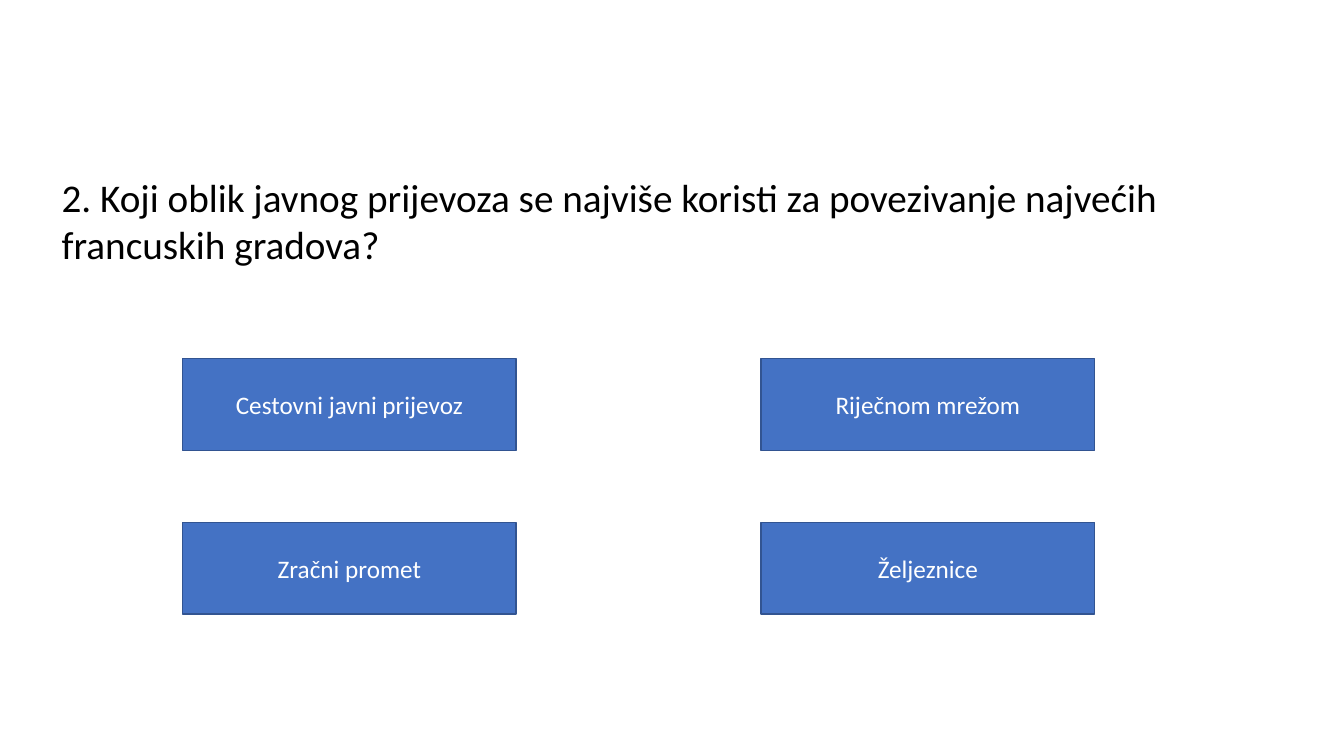
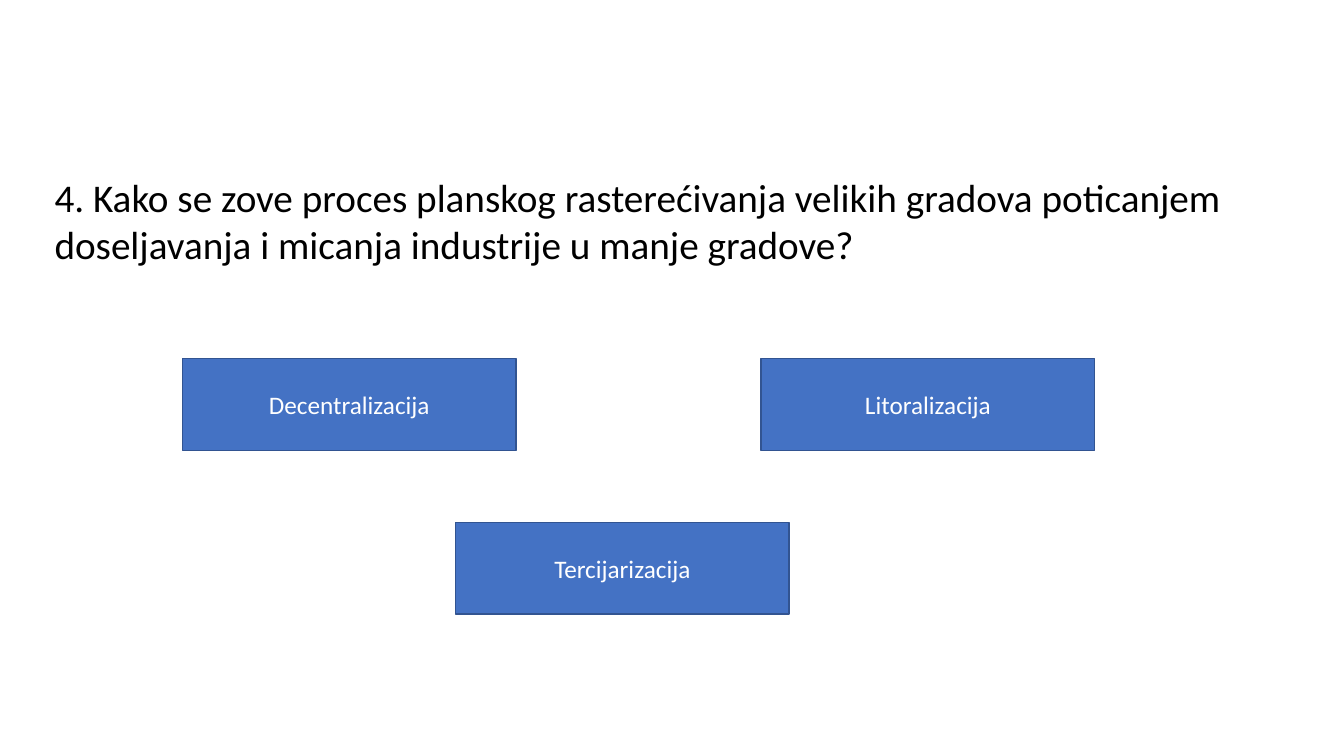
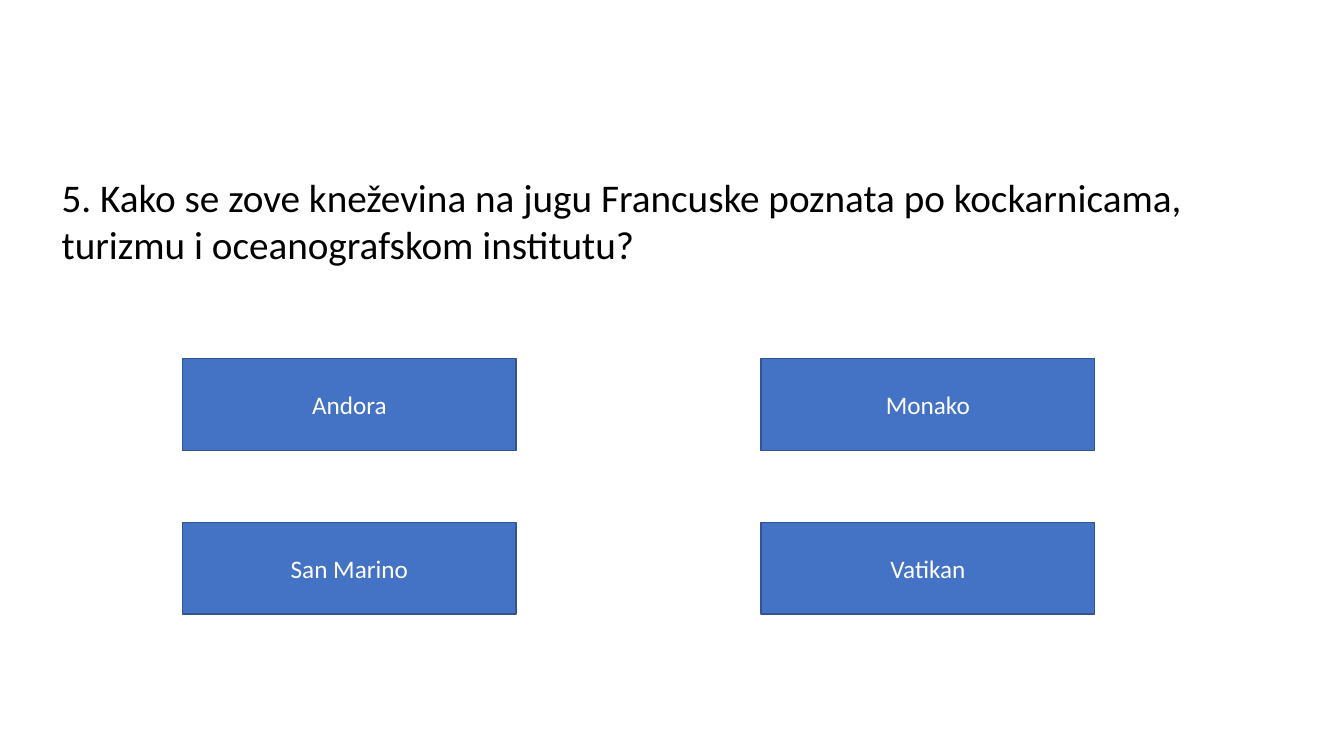
"""Build three quiz slides about France."""
from pptx import Presentation
from pptx.dml.color import RGBColor
from pptx.enum.shapes import MSO_SHAPE
from pptx.enum.text import MSO_ANCHOR, MSO_AUTO_SIZE, PP_ALIGN
from pptx.util import Cm, Pt

RECT = MSO_SHAPE.RECTANGLE
TOP, MIDDLE = MSO_ANCHOR.TOP, MSO_ANCHOR.MIDDLE
LEFT, CENTER = PP_ALIGN.LEFT, PP_ALIGN.CENTER
NO_FIT = MSO_AUTO_SIZE.NONE

COLORS = {"ink": "000000", "box": "4472C4", "edge": "325491", "light": "FFFFFF"}
COLS = (4.6, 19.18)
ROWS = (9.04, 13.16)
MID = 11.48
SLIDES = (
    (1.3, "2. Koji oblik javnog prijevoza se najviše koristi za povezivanje "
          "najvećih francuskih gradova?",
     ("Cestovni javni prijevoz", "Riječnom mrežom", "Zračni promet", "Željeznice")),
    (1.12, "4. Kako se zove proces planskog rasterećivanja velikih gradova "
           "poticanjem doseljavanja i micanja industrije u manje gradove?",
     ("Decentralizacija", "Litoralizacija", "Tercijarizacija")),
    (1.3, "5. Kako se zove kneževina na jugu Francuske poznata po kockarnicama, "
          "turizmu i oceanografskom institutu?",
     ("Andora", "Monako", "San Marino", "Vatikan")),
)


class Quiz:
    font = "Calibri"

    def __init__(self):
        self.deck = Presentation()
        self.deck.slide_width, self.deck.slide_height = Cm(33.87), Cm(19.05)
        self.slide = None

    def color(self, name):
        return RGBColor.from_string(COLORS[name])

    def label(self, shape, text, size, color, align, anchor):
        frame = shape.text_frame
        frame.text = text
        frame.word_wrap = True
        frame.auto_size = NO_FIT
        frame.vertical_anchor = anchor
        para = frame.paragraphs[0]
        para.alignment = align
        para.font.name = self.font
        para.font.size = Pt(size)
        para.font.color.rgb = self.color(color)

    def ask(self, left, text):
        self.slide = self.deck.slides.add_slide(self.deck.slide_layouts[5])
        title = self.slide.shapes.title
        title.left, title.top = Cm(left), Cm(4.24)
        title.width, title.height = Cm(31.65), Cm(2.65)
        self.label(title, text, 28, "ink", LEFT, TOP)

    def answer(self, left, top, text):
        box = self.slide.shapes.add_shape(RECT, Cm(left), Cm(top), Cm(8.41), Cm(2.31))
        box.shadow.inherit = False
        box.fill.solid()
        box.fill.fore_color.rgb = self.color("box")
        box.line.color.rgb = self.color("edge")
        box.line.width = Pt(1)
        self.label(box, text, 18, "light", CENTER, MIDDLE)

    def answers(self, texts):
        for i, text in enumerate(texts):
            row, col = divmod(i, 2)
            alone = col == 0 and i == len(texts) - 1
            self.answer(MID if alone else COLS[col], ROWS[row], text)


def main():
    quiz = Quiz()
    for left, text, options in SLIDES:
        quiz.ask(left, text)
        quiz.answers(options)
    quiz.deck.save("out.pptx")


if __name__ == "__main__":
    main()
